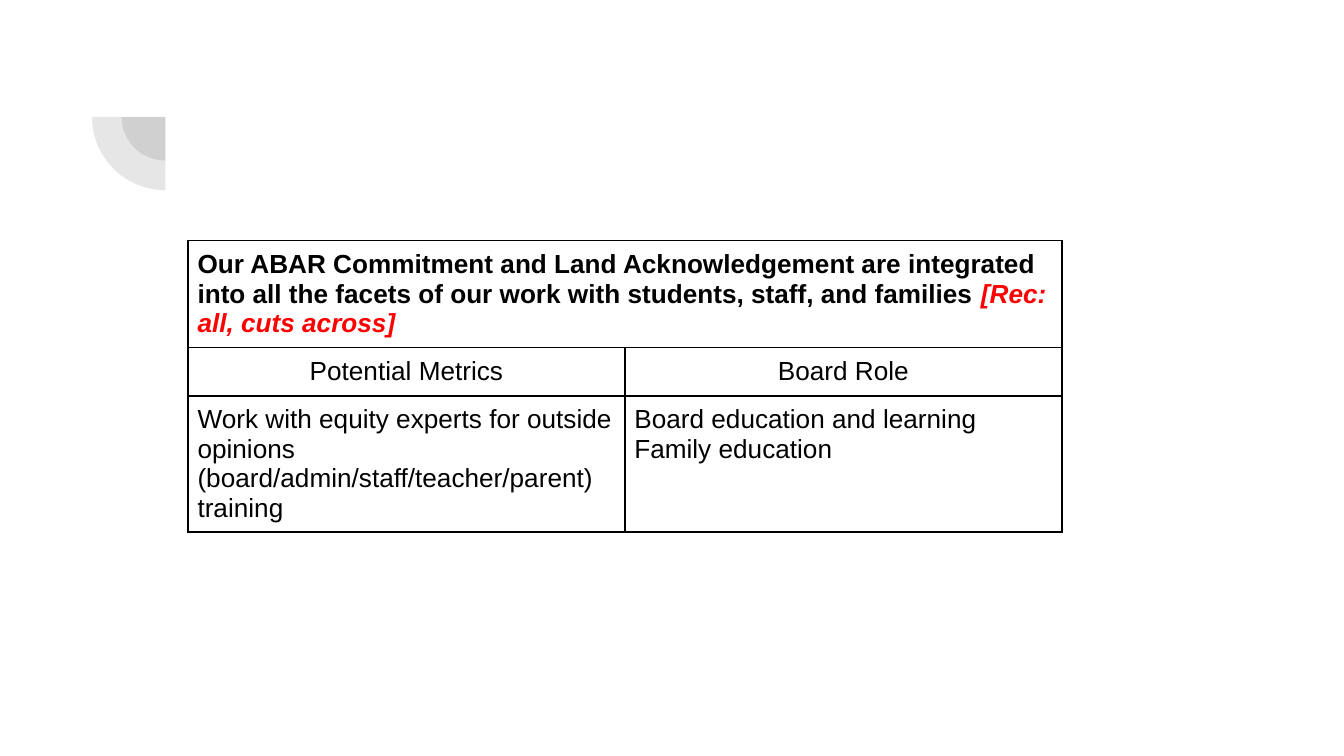
import pptx
import pptx.util
import pptx.dml.color
import pptx.enum.shapes
import pptx.enum.text
import pptx.oxml
import pptx.oxml.ns
import lxml.etree
from dataclasses import dataclass

Inches = pptx.util.Inches
Align = pptx.enum.text.PP_ALIGN


@dataclass(frozen=True)
class Theme:
    font: str = "Arial"
    size: int = 14
    ink: str = "000000"
    note: str = "FF0000"
    paper: str = "FFFFFF"
    arc: str = "424242"
    alpha: int = 13
    line: int = 1
    pad: float = 0.07


THEME = Theme()


def color(code):
    return pptx.dml.color.RGBColor.from_string(code)


def add_pie(slide, x, y, size):
    kind = pptx.enum.shapes.MSO_SHAPE.PIE
    left, top = x - size / 2, y - size / 2
    pie = slide.shapes.add_shape(kind, Inches(left), Inches(top), Inches(size), Inches(size))
    pie.adjustments[0] = 108
    pie.adjustments[1] = 162
    pie.rotation = 270
    pie.shadow.inherit = False
    pie.line.fill.background()
    pie.fill.solid()
    pie.fill.fore_color.rgb = color(THEME.arc)
    tone = pie.fill._xPr.find(".//" + pptx.oxml.ns.qn("a:srgbClr"))
    alpha = lxml.etree.SubElement(tone, pptx.oxml.ns.qn("a:alpha"))
    alpha.set("val", str(THEME.alpha * 1000))


def add_run(para, text, ink=THEME.ink, bold=False, slant=False):
    run = para.add_run()
    run.text = text
    font = run.font
    font.name = THEME.font
    font.size = pptx.util.Pt(THEME.size)
    font.bold = bold
    font.italic = slant
    font.color.rgb = color(ink)


def set_edges(cell):
    props = cell._tc.get_or_add_tcPr()
    width = pptx.util.Pt(THEME.line)
    for index, side in enumerate(("lnL", "lnR", "lnT", "lnB")):
        edge = pptx.oxml.parse_xml(
            f'<a:{side} {pptx.oxml.ns.nsdecls("a")} w="{width}">'
            f'<a:solidFill><a:srgbClr val="{THEME.ink}"/></a:solidFill>'
            f'</a:{side}>'
        )
        props.insert(index, edge)


def style_cell(cell):
    cell.fill.solid()
    cell.fill.fore_color.rgb = color(THEME.paper)
    pad = Inches(THEME.pad)
    cell.margin_left = cell.margin_right = pad
    cell.margin_top = cell.margin_bottom = pad
    set_edges(cell)


def fill_cell(cell, lines, align=Align.LEFT):
    frame = cell.text_frame
    for index, line in enumerate(lines):
        para = frame.add_paragraph() if index else frame.paragraphs[0]
        para.alignment = align
        add_run(para, line)


def add_grid(slide):
    rows, cols = (0.79, 0.36, 1.01), (3.25, 3.25)
    frame = slide.shapes.add_table(
        len(rows), len(cols), Inches(1.4), Inches(1.79), Inches(sum(cols)), Inches(sum(rows))
    )
    grid = frame.table
    for row, height in zip(grid.rows, rows):
        row.height = Inches(height)
    for col, width in zip(grid.columns, cols):
        col.width = Inches(width)
    for cell in grid.iter_cells():
        style_cell(cell)
    grid.cell(0, 0).merge(grid.cell(0, 1))
    return grid


def main():
    deck = pptx.Presentation()
    deck.slide_width = Inches(10)
    deck.slide_height = deck.slide_width * 9 // 16
    slide = deck.slides.add_slide(deck.slide_layouts[6])

    for size in (0.65, 1.09):
        add_pie(slide, 1.23, 0.87, size)

    grid = add_grid(slide)
    head = grid.cell(0, 0).text_frame.paragraphs[0]
    add_run(
        head,
        "Our ABAR Commitment and Land Acknowledgement are integrated into all "
        "the facets of our work with students, staff, and families ",
        bold=True,
    )
    add_run(head, "[Rec: all, cuts across]", THEME.note, bold=True, slant=True)

    columns = (
        ("Potential Metrics", (
            "Work with equity experts for outside opinions",
            "(board/admin/staff/teacher/parent) training",
        )),
        ("Board Role", ("Board education and learning", "Family education")),
    )
    for index, (label, lines) in enumerate(columns):
        fill_cell(grid.cell(1, index), [label], Align.CENTER)
        fill_cell(grid.cell(2, index), lines)

    deck.save("out.pptx")


if __name__ == "__main__":
    main()
